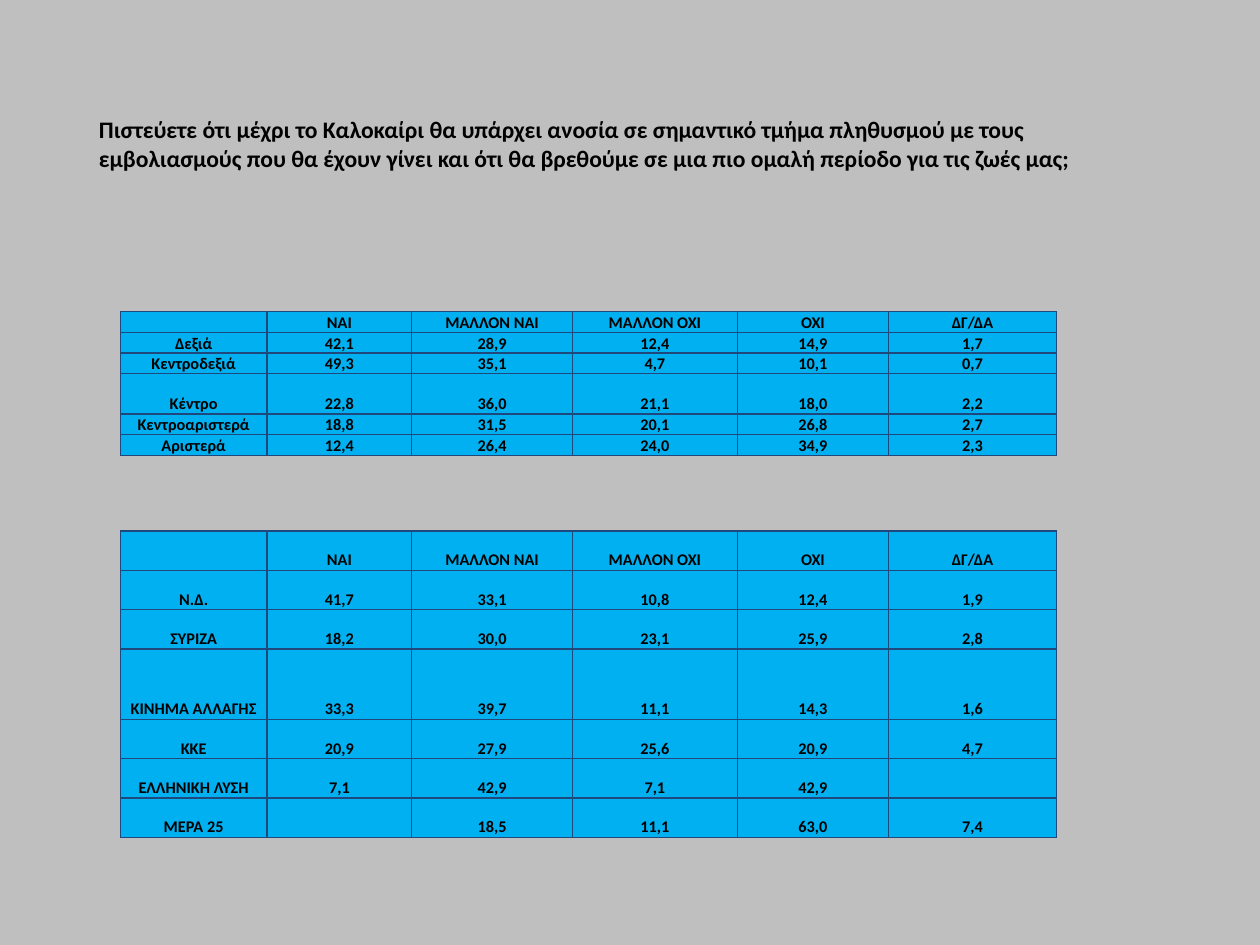
"""Builds a poll slide with a question and two result tables."""
from lxml import etree
from pptx import Presentation
from pptx import util as u
from pptx.dml import color
from pptx.enum import text
from pptx.oxml import ns

INK = {"back": "BFBFBF", "cell": "00B0F0", "line": "1F497D", "text": "000000"}
COLS = [1.38, 1.36, 1.51, 1.55, 1.42, 1.58]
HEAD = ["", "ΝΑΙ", "ΜΑΛΛΟΝ ΝΑΙ", "ΜΑΛΛΟΝ ΟΧΙ", "ΟΧΙ", "ΔΓ/ΔΑ"]
ASK = ("Πιστεύετε ότι μέχρι το Καλοκαίρι θα υπάρχει ανοσία σε σημαντικό τμήμα "
       "πληθυσμού με τους εμβολιασμούς που θα έχουν γίνει και ότι θα βρεθούμε "
       "σε μια πιο ομαλή περίοδο για τις ζωές μας;")
SIDES = [
    ["Δεξιά", "42,1", "28,9", "12,4", "14,9", "1,7"],
    ["Κεντροδεξιά", "49,3", "35,1", "4,7", "10,1", "0,7"],
    ["Κέντρο", "22,8", "36,0", "21,1", "18,0", "2,2"],
    ["Κεντροαριστερά", "18,8", "31,5", "20,1", "26,8", "2,7"],
    ["Αριστερά", "12,4", "26,4", "24,0", "34,9", "2,3"],
]
PARTIES = [
    ["Ν.Δ.", "41,7", "33,1", "10,8", "12,4", "1,9"],
    ["ΣΥΡΙΖΑ", "18,2", "30,0", "23,1", "25,9", "2,8"],
    ["ΚΙΝΗΜΑ ΑΛΛΑΓΗΣ", "33,3", "39,7", "11,1", "14,3", "1,6"],
    ["ΚΚΕ", "20,9", "27,9", "25,6", "20,9", "4,7"],
    ["ΕΛΛΗΝΙΚΗ ΛΥΣΗ", "7,1", "42,9", "7,1", "42,9", ""],
    ["ΜΕΡΑ 25", "", "18,5", "11,1", "63,0", "7,4"],
]


def rgb(name):
    return color.RGBColor.from_string(INK[name])


class Deck:
    """Holds the style and the current slide."""

    def __init__(self, wide, high, face):
        self.show = Presentation()
        self.show.slide_width = u.Inches(wide)
        self.show.slide_height = u.Inches(high)
        self.face = face
        self.slide = self.show.slides.add_slide(self.show.slide_layouts[6])
        fill = self.slide.background.fill
        fill.solid()
        fill.fore_color.rgb = rgb("back")

    def style(self, para, size):
        for run in para.runs:
            font = run.font
            font.name, font.size, font.bold = self.face, u.Pt(size), True
            font.color.rgb = rgb("text")

    def title(self, words, box, size):
        frame = self.slide.shapes.add_textbox(*map(u.Inches, box)).text_frame
        frame.word_wrap = True
        frame.vertical_anchor = text.MSO_ANCHOR.MIDDLE
        frame.margin_left = frame.margin_right = u.Inches(0.12)
        frame.margin_top = frame.margin_bottom = u.Inches(0.06)
        frame.text = words
        self.style(frame.paragraphs[0], size)

    def border(self, cell, width):
        props = cell._tc.get_or_add_tcPr()
        for side in ("lnL", "lnR", "lnT", "lnB"):
            line = etree.SubElement(props, ns.qn("a:" + side), w=str(u.Pt(width)))
            fill = etree.SubElement(line, ns.qn("a:solidFill"))
            etree.SubElement(fill, ns.qn("a:srgbClr"), val=INK["line"])

    def cell(self, cell, words, size):
        self.border(cell, 1)
        cell.fill.solid()
        cell.fill.fore_color.rgb = rgb("cell")
        cell.vertical_anchor = text.MSO_ANCHOR.BOTTOM
        cell.margin_left = cell.margin_right = cell.margin_top = u.Inches(0.01)
        cell.margin_bottom = 0
        cell.text = words
        para = cell.text_frame.paragraphs[0]
        para.alignment = text.PP_ALIGN.CENTER
        self.style(para, size)
        if not words:
            etree.SubElement(para._p, ns.qn("a:endParaRPr"), sz=str(size * 100))

    def table(self, data, left, top, highs, size=11):
        box = map(u.Inches, (left, top, sum(COLS), sum(highs)))
        grid = self.slide.shapes.add_table(len(data), len(COLS), *box).table
        grid.first_row = grid.horz_banding = False
        for col, wide in zip(grid.columns, COLS):
            col.width = u.Inches(wide)
        for row, high, words in zip(grid.rows, highs, data):
            row.height = u.Inches(high)
            for cell, word in zip(row.cells, words):
                self.cell(cell, word, size)


def main():
    deck = Deck(11.84, 8.88, "Calibri")
    deck.title(ASK, (0.81, 0.47, 10.21, 1.76), 16)
    deck.table([HEAD] + SIDES, 1.13, 2.93, [0.19] * 3 + [0.38] + [0.19] * 2)
    deck.table([HEAD] + PARTIES, 1.13, 4.99, [0.37] * 3 + [0.66] + [0.37] * 3)
    deck.show.save("out.pptx")


if __name__ == "__main__":
    main()
